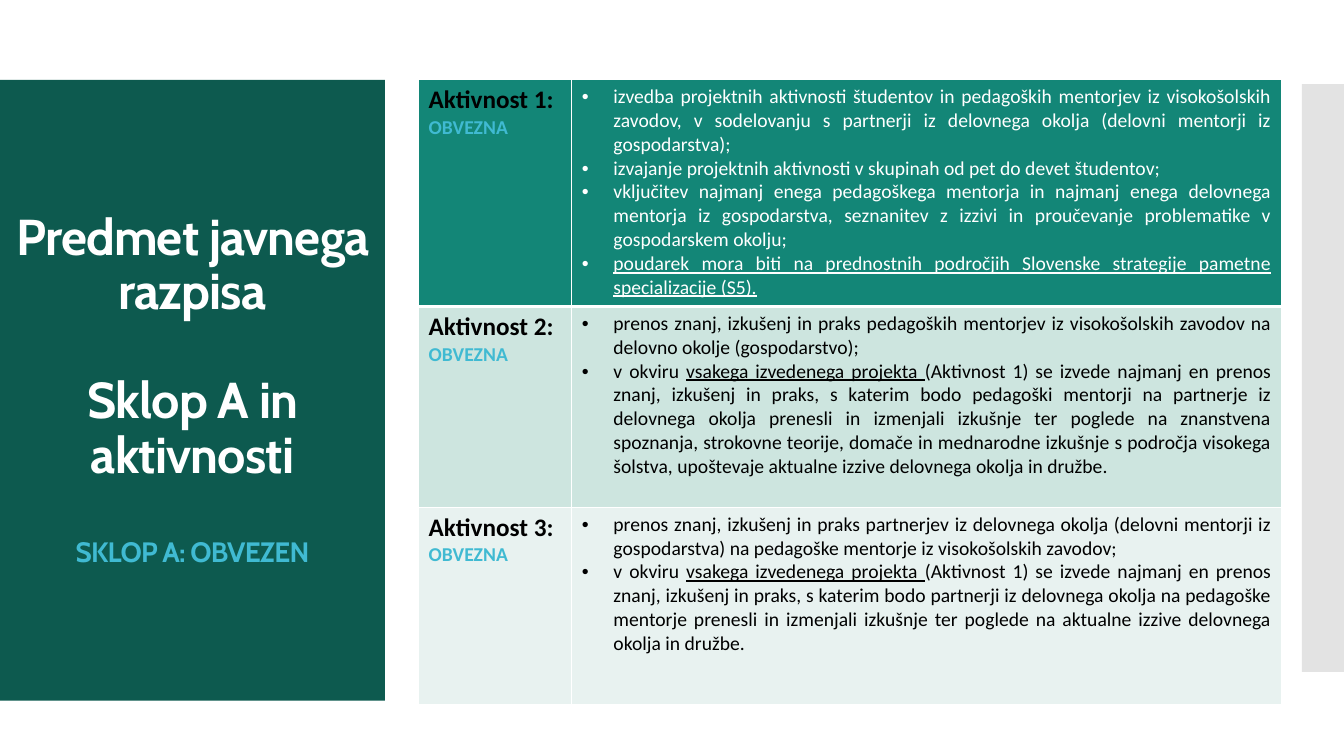
from dataclasses import dataclass

from lxml import etree
from pptx import Presentation
from pptx.dml import color, fill
from pptx.enum import shapes, text
from pptx.oxml import ns
from pptx.slide import Slide
from pptx.table import _Cell
from pptx.text import text as txt
from pptx.util import Pt

WHITE, BLACK, SKY = "FFFFFF", "000000", "40BAD2"
TABLE_TOP = 57
COLUMN_WIDTHS = (109.5, 507)
BULLET_INDENT = 22.5
BODY = {"name": "Calibri", "size": Pt(14), "bold": False}
HEADING = {"name": "Calibri", "size": Pt(18), "bold": True}
TAG = {"name": "Calibri", "size": Pt(14), "bold": True}
TITLE = {"name": "Cabin", "size": Pt(36), "bold": True}
SUBTITLE = {"name": "Cabin", "size": Pt(20), "bold": True}


@dataclass
class Run:
    words: str
    underline: bool = False


@dataclass
class Activity:
    heading: str
    background: str
    ink: str
    height: float
    bottom_line: float
    bullets: list[list[Run]]


@dataclass
class TitleLine:
    words: str
    style: dict
    ink: str
    space_before: float


@dataclass
class Panel:
    left: float
    top: float
    width: float
    height: float
    colour: str
    alpha: int = 100


SIDE_PANEL = Panel(930, 60, 30, 420, "C8C8C8", 50)
TITLE_PANEL = Panel(0, TABLE_TOP, 275, 443.5, "0D5A4F")

TITLE_LINES = [
    TitleLine("Predmet javnega razpisa", TITLE, WHITE, 0),
    TitleLine("Sklop A in aktivnosti", TITLE, WHITE, 39),
    TitleLine("SKLOP A: OBVEZEN", SUBTITLE, SKY, 39),
]


def project_bullet(ending: str) -> list[Run]:
    return [
        Run("v okviru "),
        Run("vsakega izvedenega projekta ", True),
        Run("(Aktivnost 1) se izvede najmanj en prenos znanj, izkušenj in praks, "
            "s katerim bodo " + ending),
    ]


ACTIVITIES = [
    Activity("Aktivnost 1:", "138677", WHITE, 162, 3, [
        [Run("izvedba projektnih aktivnosti študentov in pedagoških mentorjev iz "
             "visokošolskih zavodov, v sodelovanju s partnerji iz delovnega okolja "
             "(delovni mentorji iz gospodarstva);")],
        [Run("izvajanje projektnih aktivnosti v skupinah od pet do devet študentov;")],
        [Run("vključitev najmanj enega pedagoškega mentorja in najmanj enega delovnega "
             "mentorja iz gospodarstva, seznanitev z izzivi in proučevanje problematike "
             "v gospodarskem okolju;")],
        [Run("poudarek mora biti na prednostnih področjih Slovenske strategije pametne "
             "specializacije (S5).", True)],
    ]),
    Activity("Aktivnost 2:", "CDE5DF", BLACK, 143.5, 1, [
        [Run("prenos znanj, izkušenj in praks pedagoških mentorjev iz visokošolskih "
             "zavodov na delovno okolje (gospodarstvo);")],
        project_bullet("pedagoški mentorji na partnerje iz delovnega okolja prenesli in "
                       "izmenjali izkušnje ter poglede na znanstvena spoznanja, strokovne "
                       "teorije, domače in mednarodne izkušnje s področja visokega "
                       "šolstva, upoštevaje aktualne izzive delovnega okolja in družbe."),
    ]),
    Activity("Aktivnost 3:", "E8F2F0", BLACK, 141, 1, [
        [Run("prenos znanj, izkušenj in praks partnerjev iz delovnega okolja (delovni "
             "mentorji iz gospodarstva) na pedagoške mentorje iz visokošolskih zavodov;")],
        project_bullet("partnerji iz delovnega okolja na pedagoške mentorje prenesli in "
                       "izmenjali izkušnje ter poglede na aktualne izzive delovnega "
                       "okolja in družbe."),
    ]),
]


def paint(target: fill.FillFormat, colour: str) -> None:
    target.solid()
    target.fore_color.rgb = color.RGBColor.from_string(colour)


def add_run(paragraph: txt._Paragraph, run: Run, style: dict, ink: str) -> txt._Run:
    result = paragraph.add_run()
    result.text = run.words
    for name, value in {**style, "underline": run.underline}.items():
        setattr(result.font, name, value)
    paint(result.font.fill, ink)
    return result


def next_paragraph(frame: txt.TextFrame, index: int) -> txt._Paragraph:
    return frame.add_paragraph() if index else frame.paragraphs[0]


def add_panel(slide: Slide, panel: Panel):
    shape = slide.shapes.add_shape(
        shapes.MSO_SHAPE.RECTANGLE,
        Pt(panel.left), Pt(panel.top), Pt(panel.width), Pt(panel.height))
    shape.shadow.inherit = False
    paint(shape.fill, panel.colour)
    shape.line.fill.background()
    if panel.alpha < 100:
        swatch = shape._element.spPr.find(".//" + ns.qn("a:srgbClr"))
        etree.SubElement(swatch, ns.qn("a:alpha"), val=str(panel.alpha * 1000))
    return shape


def add_title(slide: Slide) -> None:
    frame = add_panel(slide, TITLE_PANEL).text_frame
    frame.word_wrap = True
    frame.vertical_anchor = text.MSO_ANCHOR.MIDDLE
    for index, line in enumerate(TITLE_LINES):
        paragraph = next_paragraph(frame, index)
        layout = {"alignment": text.PP_ALIGN.CENTER, "line_spacing": 0.9,
                  "space_before": Pt(line.space_before)}
        for name, value in layout.items():
            setattr(paragraph, name, value)
        run = add_run(paragraph, Run(line.words), line.style, line.ink)
        run._r.get_or_add_rPr().set("spc", "-60")


def style_cell(cell: _Cell, background: str, top_line: float, bottom_line: float) -> None:
    paint(cell.fill, background)
    properties = cell._tc.get_or_add_tcPr()
    widths = {"lnL": 1, "lnR": 1, "lnT": top_line, "lnB": bottom_line}
    for index, (side, width) in enumerate(widths.items()):
        border = etree.Element(ns.qn("a:" + side), w=str(Pt(width)))
        solid = etree.SubElement(border, ns.qn("a:solidFill"))
        etree.SubElement(solid, ns.qn("a:srgbClr"), val=WHITE)
        properties.insert(index, border)


def make_bullet(paragraph: txt._Paragraph) -> None:
    paragraph.alignment = text.PP_ALIGN.JUSTIFY
    properties = paragraph._p.get_or_add_pPr()
    properties.set("marL", str(Pt(BULLET_INDENT)))
    properties.set("indent", str(-Pt(BULLET_INDENT)))
    etree.SubElement(properties, ns.qn("a:buFont"), typeface="Arial")
    etree.SubElement(properties, ns.qn("a:buChar"), char="•")


def add_activities(slide: Slide) -> None:
    table = slide.shapes.add_table(
        len(ACTIVITIES), len(COLUMN_WIDTHS), Pt(299), Pt(TABLE_TOP),
        Pt(sum(COLUMN_WIDTHS)), Pt(sum(a.height for a in ACTIVITIES))).table
    for column, width in zip(table.columns, COLUMN_WIDTHS):
        column.width = Pt(width)
    top_line = 1
    for row, activity in zip(table.rows, ACTIVITIES):
        row.height = Pt(activity.height)
        label, details = row.cells
        for cell in (label, details):
            style_cell(cell, activity.background, top_line, activity.bottom_line)
        top_line = activity.bottom_line
        add_run(next_paragraph(label.text_frame, 0), Run(activity.heading), HEADING, BLACK)
        add_run(next_paragraph(label.text_frame, 1), Run("OBVEZNA"), TAG, SKY)
        for index, runs in enumerate(activity.bullets):
            paragraph = next_paragraph(details.text_frame, index)
            make_bullet(paragraph)
            for run in runs:
                add_run(paragraph, run, BODY, activity.ink)


def main() -> None:
    presentation = Presentation()
    presentation.slide_width = Pt(960)
    presentation.slide_height = Pt(540)
    slide = presentation.slides.add_slide(presentation.slide_layouts[6])
    add_panel(slide, SIDE_PANEL)
    add_title(slide)
    add_activities(slide)
    presentation.save("out.pptx")


if __name__ == "__main__":
    main()
